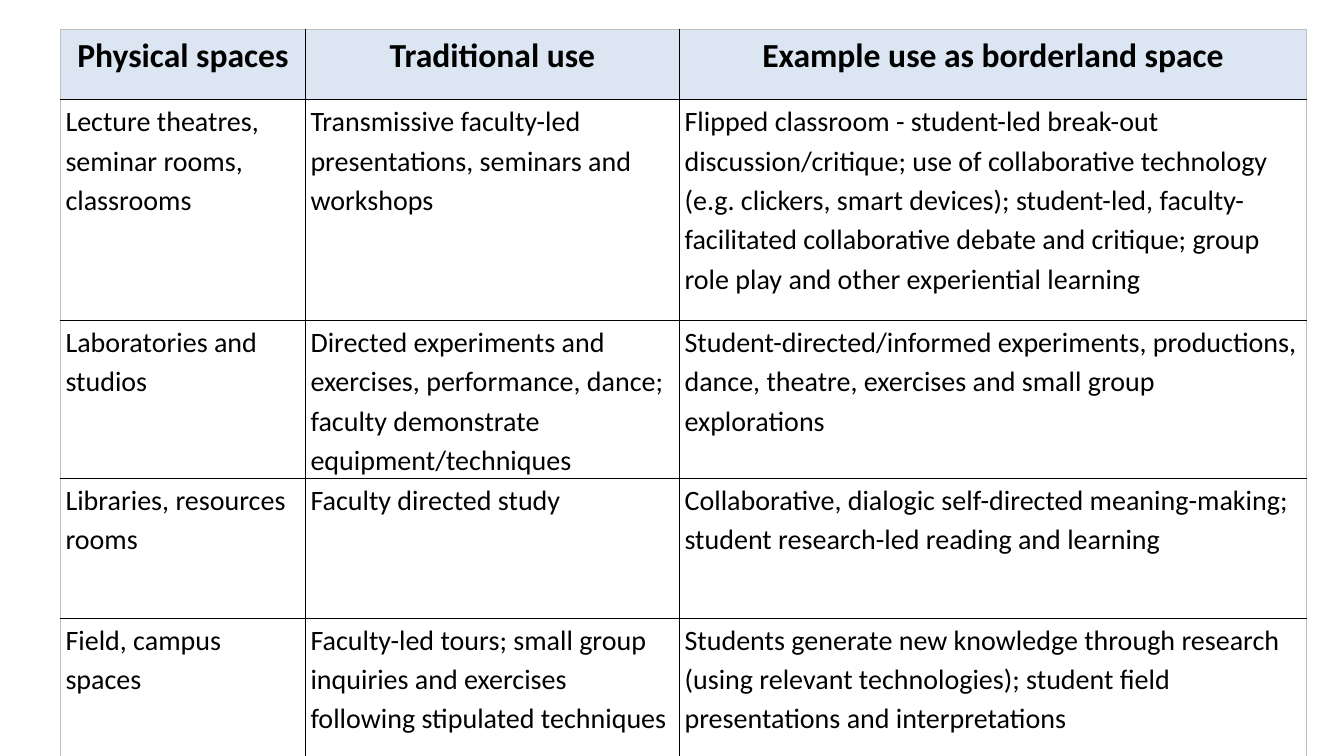
from dataclasses import dataclass

import lxml.etree
import pptx
import pptx.dml.color
import pptx.enum.text
import pptx.oxml.ns
import pptx.util

Inches = pptx.util.Inches
Pt = pptx.util.Pt
Align = pptx.enum.text.PP_ALIGN

FONT = "Calibri"
BLACK = "000000"
GREY = "BFBFBF"
WIDTHS = [2.43, 3.71, 6.22]


@dataclass
class Row:
    height: float
    texts: tuple[str, str, str]


@dataclass
class Style:
    size: int
    bold: bool
    align: Align
    fill: str


HEAD = Style(24, True, Align.CENTER, "DCE6F2")
BODY = Style(20, False, Align.LEFT, "FFFFFF")

ROWS = [
    Row(0.7, ("Physical spaces", "Traditional use",
              "Example use as borderland space")),
    Row(2.19, (
        "Lecture theatres, seminar rooms, classrooms",
        "Transmissive faculty-led presentations, seminars and workshops",
        "Flipped classroom - student-led break-out discussion/critique; "
        "use of collaborative technology (e.g. clickers, smart devices); "
        "student-led, faculty-facilitated collaborative debate and critique; "
        "group role play and other experiential learning")),
    Row(1.41, (
        "Laboratories and studios",
        "Directed experiments and exercises, performance, dance; "
        "faculty demonstrate equipment/techniques",
        "Student-directed/informed experiments, productions, dance, theatre, "
        "exercises and small group explorations")),
    Row(1.39, (
        "Libraries, resources rooms",
        "Faculty directed study",
        "Collaborative, dialogic self-directed meaning-making; "
        "student research-led reading and learning")),
    Row(1.41, (
        "Field, campus spaces",
        "Faculty-led tours; small group inquiries and exercises "
        "following stipulated techniques",
        "Students generate new knowledge through research "
        "(using relevant technologies); student field presentations "
        "and interpretations")),
]


def color(code: str) -> pptx.dml.color.RGBColor:
    return pptx.dml.color.RGBColor.from_string(code)


def add_edges(cell, edges: dict[str, str]) -> None:
    qn = pptx.oxml.ns.qn
    props = cell._tc.get_or_add_tcPr()
    for spot, (side, code) in enumerate(edges.items()):
        line = lxml.etree.Element(qn(f"a:ln{side}"), w=str(Pt(1)))
        fill = lxml.etree.SubElement(line, qn("a:solidFill"))
        lxml.etree.SubElement(fill, qn("a:srgbClr"), val=code)
        props.insert(spot, line)


def fill_cell(cell, text: str, style: Style) -> None:
    cell.margin_left = cell.margin_right = Inches(0.05)
    cell.margin_top = cell.margin_bottom = 0
    cell.fill.solid()
    cell.fill.fore_color.rgb = color(style.fill)
    para = cell.text_frame.paragraphs[0]
    para.alignment = style.align
    para.line_spacing = 1.15
    run = para.add_run()
    run.text = text
    run.font.name = FONT
    run.font.size = Pt(style.size)
    run.font.bold = style.bold
    run.font.color.rgb = color(BLACK)


def add_grid(slide) -> None:
    high = sum(row.height for row in ROWS)
    grid = slide.shapes.add_table(
        len(ROWS), len(WIDTHS), Inches(0.6), Inches(0.29),
        Inches(sum(WIDTHS)), Inches(high)).table
    grid.horz_banding = False
    for col, width in zip(grid.columns, WIDTHS):
        col.width = Inches(width)
    for r, row in enumerate(ROWS):
        grid.rows[r].height = Inches(row.height)
        for c, text in enumerate(row.texts):
            cell = grid.cell(r, c)
            fill_cell(cell, text, BODY if r else HEAD)
            add_edges(cell, {
                "L": BLACK if c else GREY,
                "R": BLACK if c < len(WIDTHS) - 1 else GREY,
                "T": BLACK if r else GREY,
                "B": BLACK,
            })


def main() -> None:
    deck = pptx.Presentation()
    deck.slide_width = Inches(13.33)
    deck.slide_height = Inches(7.5)
    add_grid(deck.slides.add_slide(deck.slide_layouts[6]))
    deck.save("out.pptx")


if __name__ == "__main__":
    main()
